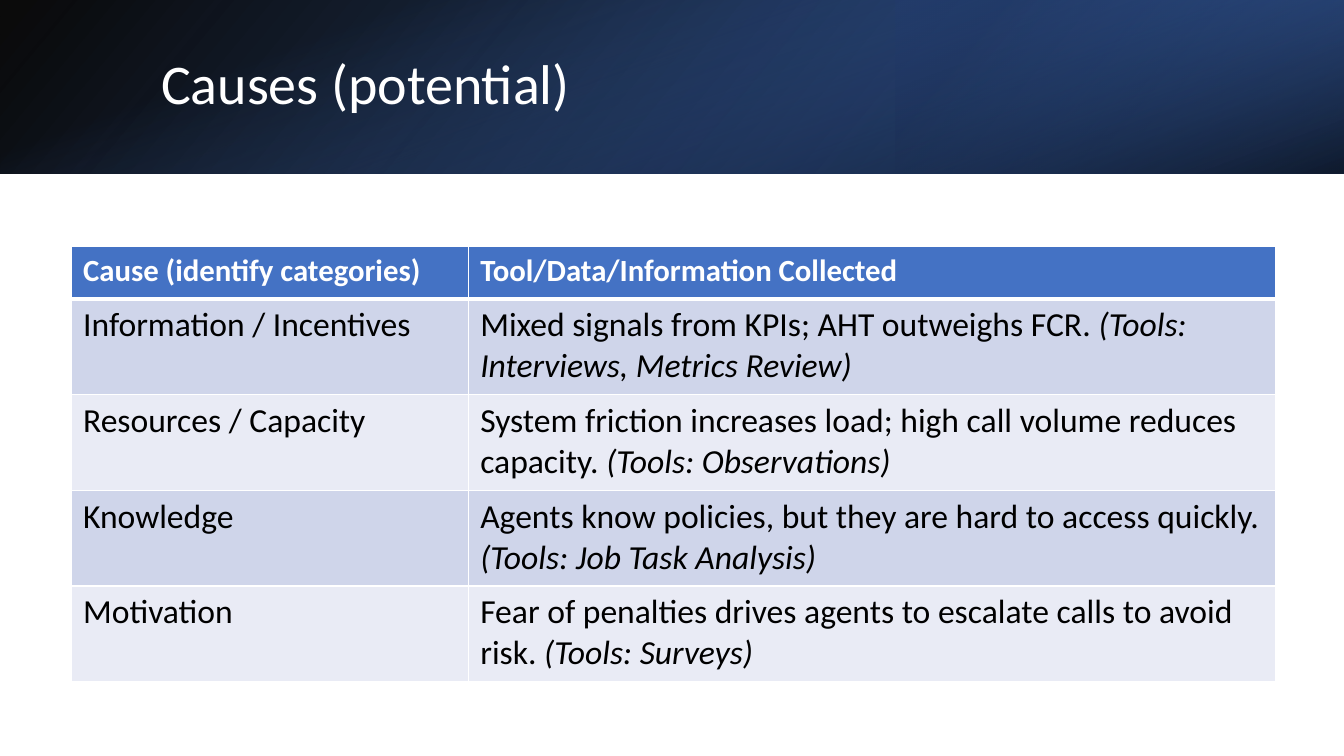
import pptx
import pptx.dml.color
import pptx.enum.shapes
import pptx.enum.text
import pptx.oxml.ns
import pptx.oxml.xmlchemy
import pptx.util

Pt = pptx.util.Pt
qn = pptx.oxml.ns.qn
OxmlElement = pptx.oxml.xmlchemy.OxmlElement
WIDTH, HEIGHT, BANNER = 960, 540, 124

HEADER = ["Cause (identify categories)", "Tool/Data/Information Collected"]
CAUSES = [
    ("Information / Incentives", "Mixed signals from KPIs; AHT outweighs FCR. ",
     "(Tools: Interviews, Metrics Review)"),
    ("Resources / Capacity",
     "System friction increases load; high call volume reduces capacity. ",
     "(Tools: Observations)"),
    ("Knowledge", "Agents know policies, but they are hard to access quickly. ",
     "(Tools: Job Task Analysis)"),
    ("Motivation", "Fear of penalties drives agents to escalate calls to avoid risk. ",
     "(Tools: Surveys)"),
]


def color(value):
    return pptx.dml.color.RGBColor.from_string(value)


class Deck:
    font = "Calibri"
    white, black, blue = "FFFFFF", "000000", "4472C4"
    bands = ("CFD5EA", "E9EBF5")

    def __init__(self):
        self.prs = pptx.Presentation()
        self.prs.slide_width, self.prs.slide_height = Pt(WIDTH), Pt(HEIGHT)
        self.s = self.prs.slides.add_slide(self.prs.slide_layouts[6])

    def run(self, p, text, size, fill, bold=False, italic=False):
        r = p.add_run()
        r.text = text
        r.font.name, r.font.size = self.font, Pt(size)
        r.font.bold, r.font.italic = bold, italic
        r.font.color.rgb = color(fill)

    def gradient(self, box, stops, angle, rotation=0, flip=False):
        """Add a rectangle; stops are (position %, colour, opacity %), angle is clockwise."""
        sp = self.s.shapes.add_shape(
            pptx.enum.shapes.MSO_SHAPE.RECTANGLE, *map(Pt, box))
        sp.shadow.inherit = False
        sp.line.fill.background()
        sp.rotation = rotation
        if flip:
            sp._element.spPr.find(qn("a:xfrm")).set("flipH", "1")
        sp.fill.gradient()
        sp.fill.gradient_angle = 360 - angle
        for stop, (position, value, _) in zip(sp.fill.gradient_stops, stops):
            stop.position = position / 100
            stop.color.rgb = color(value)
        tones = sp._element.spPr.iter(qn("a:srgbClr"))
        for tone, (_, _, opacity) in zip(tones, stops):
            alpha = OxmlElement("a:alpha")
            alpha.set("val", str(opacity * 1000))
            tone.append(alpha)

    def title(self, text, box):
        tf = self.s.shapes.add_textbox(*map(Pt, box)).text_frame
        tf.word_wrap = True
        tf.vertical_anchor = pptx.enum.text.MSO_ANCHOR.MIDDLE
        p = tf.paragraphs[0]
        p.line_spacing = 0.9
        self.run(p, text, 40, self.white)

    def borders(self, cell, widths):
        """Draw white borders in the order left, right, top, bottom."""
        tcPr = cell._tc.get_or_add_tcPr()
        for i, (side, width) in enumerate(zip("LRTB", widths)):
            ln = OxmlElement(f"a:ln{side}")
            ln.set("w", str(Pt(width)))
            fill = OxmlElement("a:solidFill")
            tone = OxmlElement("a:srgbClr")
            tone.set("val", self.white)
            fill.append(tone)
            ln.append(fill)
            tcPr.insert(i, ln)

    def cell(self, cell, fill, widths):
        """Style a cell and return its paragraph."""
        cell.margin_left = cell.margin_right = Pt(8.6)
        cell.margin_top = cell.margin_bottom = Pt(4.3)
        cell.fill.solid()
        cell.fill.fore_color.rgb = color(fill)
        self.borders(cell, widths)
        return cell.text_frame.paragraphs[0]

    def table(self, left, top, columns, header_height, row_height):
        heights = [header_height] + [row_height] * len(CAUSES)
        table = self.s.shapes.add_table(
            len(heights), len(columns), Pt(left), Pt(top),
            Pt(sum(columns)), Pt(sum(heights))).table
        for column, width in zip(table.columns, columns):
            column.width = Pt(width)
        for row, height in zip(table.rows, heights):
            row.height = Pt(height)
        for i, text in enumerate(HEADER):
            p = self.cell(table.cell(0, i), self.blue, (1, 1, 1, 3))
            self.run(p, text, 22, self.white, bold=True)
        for i, (cause, finding, tools) in enumerate(CAUSES):
            widths = (1, 1, 1 if i else 3, 1)
            left_p, right_p = [self.cell(table.cell(i + 1, j), self.bands[i % 2], widths)
                               for j in range(2)]
            self.run(left_p, cause, 24, self.black)
            self.run(right_p, finding, 24, self.black)
            self.run(right_p, tools, 24, self.black, italic=True)


def main():
    deck = Deck()
    offset = (WIDTH - BANNER) / 2
    deck.gradient((0, 0, WIDTH, BANNER),
                  [(0, "000000", 96), (100, "2F5597", 100)], 140, flip=True)
    deck.gradient((WIDTH * 2 / 3, 0, WIDTH / 3, BANNER),
                  [(19, "203864", 68), (100, "4472C4", 79)], 320, rotation=180, flip=True)
    deck.gradient((offset, -offset, BANNER, WIDTH),
                  [(23, "4472C4", 0), (99, "000000", 74)], 340, rotation=90)
    deck.title("Causes (potential)", (108, 27.4, 790.6, 69))
    deck.table(50.8, 176, (283.7, 576.7), 37.4, 68.4)
    deck.prs.save("out.pptx")


if __name__ == "__main__":
    main()
